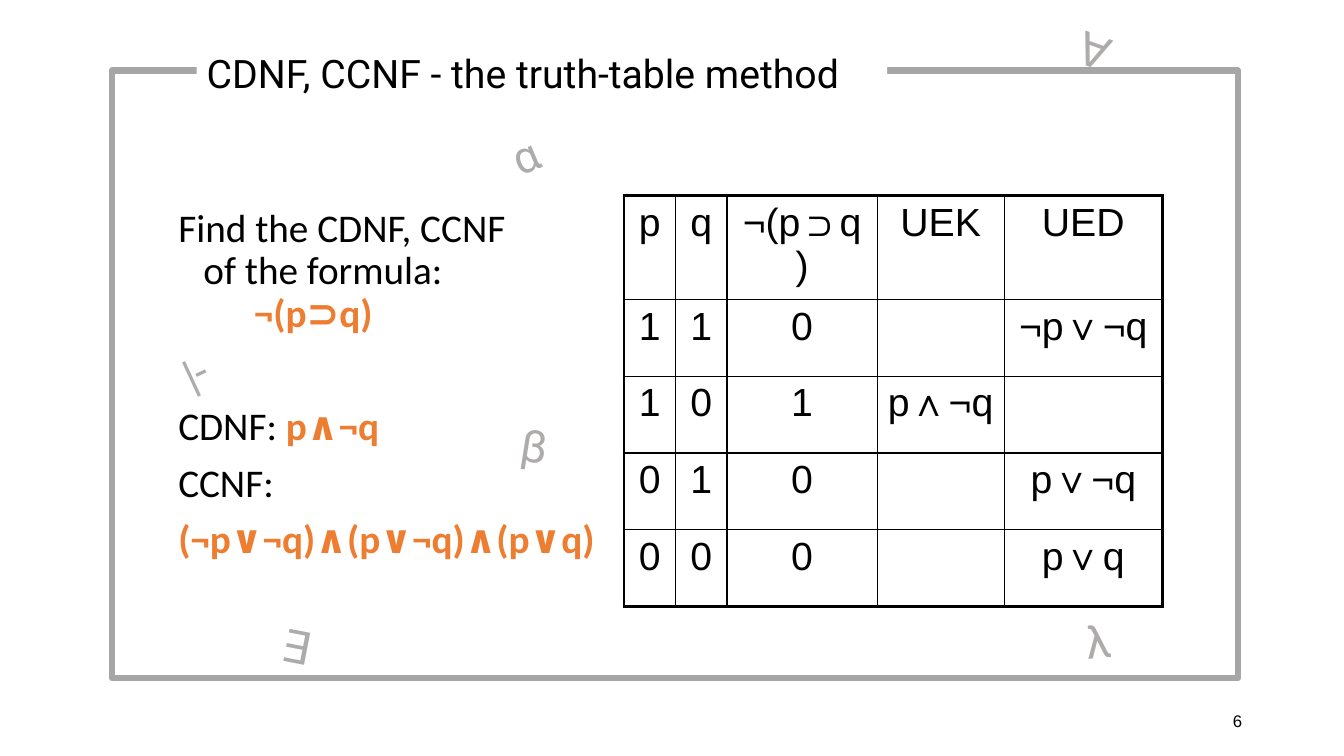
from lxml import etree
from pptx import Presentation
from pptx.dml.color import RGBColor
from pptx.enum import shapes, text
from pptx.oxml.ns import qn
from pptx.util import Inches, Pt

BLACK, ORANGE, FRAME_GREY, SYMBOL_GREY = "000000", "ED7D31", "A6A6A6", "AEABAB"


def style(font, name, size, color=BLACK):
    font.name, font.size = name, Pt(size)
    font.color.rgb = RGBColor.from_string(color)


def add_border(cell, side, width):
    """Draw one cell edge; side is L, R, T or B, called in that order."""
    line = etree.SubElement(cell._tc.get_or_add_tcPr(), qn(f"a:ln{side}"), w=str(Pt(width)))
    fill = etree.SubElement(line, qn("a:solidFill"))
    etree.SubElement(fill, qn("a:srgbClr"), val=BLACK)


deck = Presentation()
deck.slide_width, deck.slide_height = Inches(13.33), Inches(7.5)
page = deck.slides.add_slide(deck.slide_layouts[5])

# Slide number
number = page.shapes.add_textbox(Inches(9.42), Inches(6.95), Inches(3), Inches(0.4))
number.text_frame.vertical_anchor = text.MSO_ANCHOR.MIDDLE
para = number.text_frame.paragraphs[0]
para.text = "6"
para.alignment = text.PP_ALIGN.RIGHT
style(para.font, "Arial", 12)

# Task and answers: (space before, [(wording, colour)])
task = [
    (10, [("Find the CDNF, CCNF\nof the formula:\n\t", BLACK), ("¬(p⊃q)", ORANGE)]),
    (51, [("CDNF: ", BLACK), ("p∧¬q", ORANGE)]),
    (10, [("CCNF:", BLACK)]),
    (10, [("(¬p∨¬q)∧(p∨¬q)∧(p∨q)", ORANGE)]),
]
body = page.shapes.add_textbox(Inches(1.67), Inches(2.02), Inches(4.54), Inches(4.64))
body.text_frame.word_wrap = True
for index, (gap, spans) in enumerate(task):
    para = body.text_frame.add_paragraph() if index else body.text_frame.paragraphs[0]
    para.line_spacing, para.space_before = 0.9, Pt(gap)
    properties = para._p.get_or_add_pPr()
    properties.set("marL", str(Inches(0.25)))
    properties.set("indent", str(Inches(-0.25)))
    for wording, color in spans:
        for line_index, line in enumerate(wording.split("\n")):
            if line_index:
                para.add_line_break()
            span = para.add_run()
            span.text = line
            style(span.font, "Calibri", 28, color)
            span.font.bold = color == ORANGE

# Truth table
truth_rows = [
    ["p", "q", "¬(p⊃q)", "UEK", "UED"],
    ["1", "1", "0", "", "¬p∨¬q"],
    ["1", "0", "1", "p∧¬q", ""],
    ["0", "1", "0", "", "p∨¬q"],
    ["0", "0", "0", "", "p∨q"],
]
column_widths = [0.51, 0.51, 1.49, 1.26, 1.57]
table = page.shapes.add_table(5, 5, Inches(6.19), Inches(1.94), Inches(5.34), Inches(3.8)).table
table.first_row = table.horz_banding = False
for column, width in zip(table.columns, column_widths):
    column.width = Inches(width)
for r, values in enumerate(truth_rows):
    table.rows[r].height = Inches(0.76)
    for c, value in enumerate(values):
        cell = table.cell(r, c)
        outer = {"L": c == 0, "R": c == 4, "T": r == 0, "B": r == 4}
        for side, is_outer in outer.items():
            add_border(cell, side, 2.25 if is_outer else 1)
        cell.fill.background()
        para = cell.text_frame.paragraphs[0]
        para.text = value
        para.alignment = text.PP_ALIGN.CENTER
        style(para.font, "Arial", 28)

# Frame, with the title covering part of its top edge
frame = page.shapes.add_shape(shapes.MSO_SHAPE.RECTANGLE,
                              Inches(1.11), Inches(0.7), Inches(11.17), Inches(6.03))
frame.shadow.inherit = False
frame.fill.background()
frame.line.color.rgb = RGBColor.from_string(FRAME_GREY)
frame.line.width = Pt(4.5)

title = page.shapes.title
title.left, title.top, title.width, title.height = map(Inches, (1.95, 0.45, 6.85, 0.55))
title.fill.solid()
title.fill.fore_color.rgb = RGBColor.from_string("FFFFFF")
title.text_frame.auto_size = text.MSO_AUTO_SIZE.NONE
title.text_frame.vertical_anchor = text.MSO_ANCHOR.MIDDLE
para = title.text_frame.paragraphs[0]
para.text = "CDNF, CCNF - the truth-table method"
para.alignment = text.PP_ALIGN.LEFT
style(para.font, "Roboto", 28)
frame.element.addnext(title.element)

# Scattered logic symbols: symbol, left, top, width, rotation
symbols = [
    ("∀", 10.6, 0.2, 0.6, 20),
    ("∃", 2.7, 6.1, 0.63, 11),
    ("α", 4.98, 1.19, 0.63, -23),
    ("β", 5.07, 4.11, 0.58, 9),
    ("λ", 10.67, 6.02, 0.7, -6),
    ("|-", 1.71, 3.32, 0.68, -25),
]
for symbol, left, top, width, rotation in symbols:
    box = page.shapes.add_textbox(Inches(left), Inches(top), Inches(width), Inches(0.64))
    box.rotation = rotation
    box.text_frame.word_wrap = True
    box.text_frame.auto_size = text.MSO_AUTO_SIZE.SHAPE_TO_FIT_TEXT
    para = box.text_frame.paragraphs[0]
    para.text = symbol
    style(para.font, "Roboto", 32, SYMBOL_GREY)

deck.save("out.pptx")
